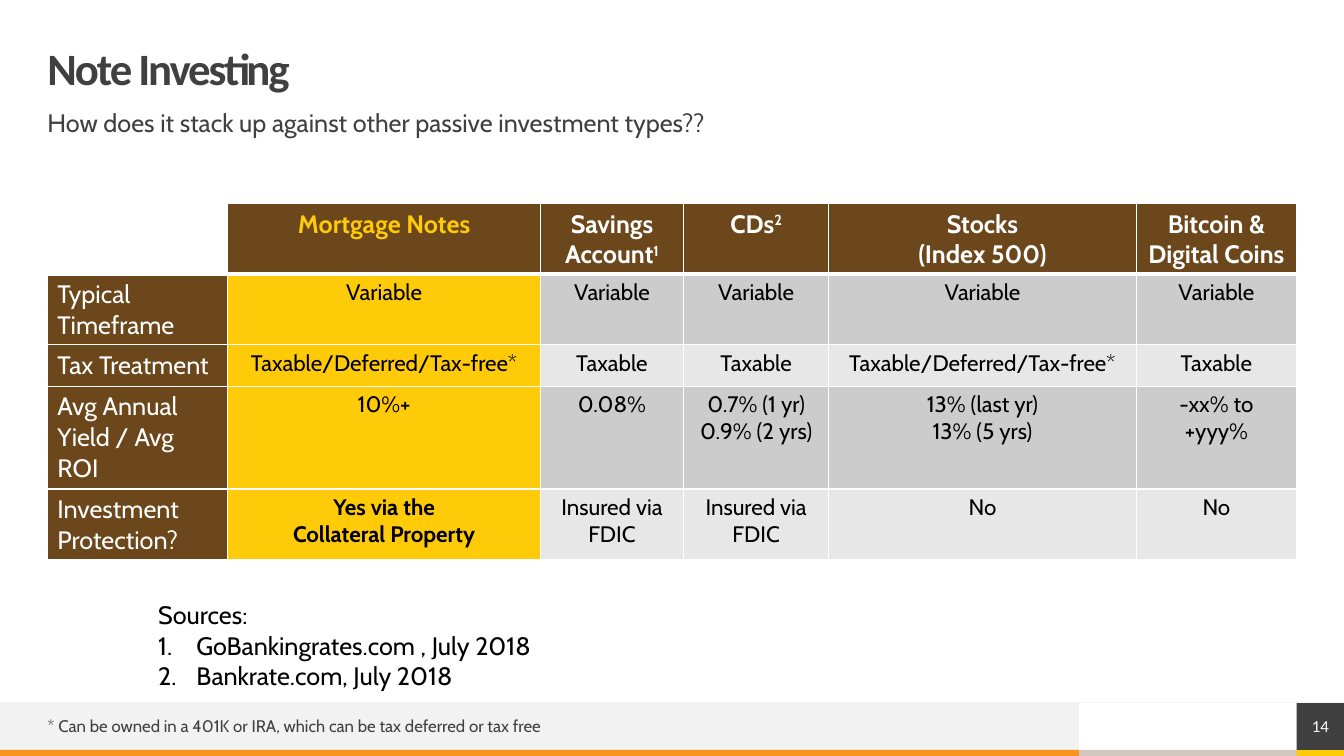
from pptx import Presentation
from pptx.dml.color import RGBColor
from pptx.enum.shapes import MSO_CONNECTOR, MSO_SHAPE
from pptx.enum.text import MSO_ANCHOR, MSO_AUTO_SIZE, PP_ALIGN
from pptx.oxml.ns import qn
from pptx.util import Inches, Pt
from lxml import etree

RECT = MSO_SHAPE.RECTANGLE
LINE = MSO_CONNECTOR.STRAIGHT
TOP, MIDDLE = MSO_ANCHOR.TOP, MSO_ANCHOR.MIDDLE
LEFT, CENTER = PP_ALIGN.LEFT, PP_ALIGN.CENTER
FIT = MSO_AUTO_SIZE.SHAPE_TO_FIT_TEXT

HEX = {
    "white": "FFFFFF", "black": "000000", "dark": "404040",
    "brown": "6B471B", "gold": "FFCA08", "orange": "F8931D",
    "taupe": "D2C6C1", "pale": "F2F2F2", "gray": "CCCCCC", "light": "E7E7E7",
}
RGB = {name: RGBColor.from_string(code) for name, code in HEX.items()}


def style(para, size, color, face="Cabin", bold=False, align=LEFT):
    para.alignment = align
    font = para.font
    font.name, font.size, font.bold = face, Pt(size), bold
    font.color.rgb = RGB[color]


def add_text(box, text, anchor=TOP):
    frame = box.text_frame
    frame.word_wrap = True
    frame.vertical_anchor = anchor
    frame.margin_left = frame.margin_right = 0
    frame.margin_top = frame.margin_bottom = 0
    frame.text = text
    return frame.paragraphs[0]


deck = Presentation()
deck.slide_width, deck.slide_height = Inches(13.33), Inches(7.5)
slide = deck.slides.add_slide(deck.slide_layouts[6])
shapes = slide.shapes

bars = [
    (10.7, 7.44, 2.17, 0.06, "taupe"),
    (0, 6.97, 10.7, 0.47, "pale"),
    (0, 7.44, 10.7, 0.06, "orange"),
    (12.86, 7.44, 0.47, 0.06, "gold"),
    (12.86, 6.97, 0.47, 0.47, "dark"),
]
for x, y, w, h, color in bars:
    bar = shapes.add_shape(RECT, Inches(x), Inches(y), Inches(w), Inches(h))
    bar.shadow.inherit = False
    bar.fill.solid()
    bar.fill.fore_color.rgb = RGB[color]
    bar.line.fill.background()
style(add_text(bar, "14", MIDDLE), 12, "white", "Calibri", align=CENTER)

rule = shapes.add_connector(LINE, Inches(13.33), Inches(6.97), 0, Inches(6.97))
rule.line.color.rgb = RGB["pale"]
rule.line.width = Pt(0.5)
etree.SubElement(rule._element.spPr, qn("a:effectLst"))

title = shapes.add_textbox(Inches(0.47), Inches(0.47), Inches(12.39), Inches(0.47))
para = add_text(title, "Note Investing", MIDDLE)
style(para, 32, "dark", "Calibri", True)
para.line_spacing = 0.9
para.runs[0]._r.get_or_add_rPr().set("spc", "-150")

lead = shapes.add_textbox(Inches(0.47), Inches(1.1), Inches(12.4), Inches(0.39))
para = add_text(lead, "How does it stack up against other passive investment types??")
style(para, 18, "dark")
para.line_spacing = 0.9

rows = [
    ["", "Mortgage Notes", "Savings Account^1", "CDs^2",
     "Stocks\n(Index 500)", "Bitcoin & Digital Coins"],
    ["Typical Timeframe"] + ["Variable"] * 5,
    ["Tax Treatment", "Taxable/Deferred/Tax-free*", "Taxable", "Taxable",
     "Taxable/Deferred/Tax-free*", "Taxable"],
    ["Avg Annual Yield / Avg ROI", "10%+", "0.08%", "0.7% (1 yr)\n0.9% (2 yrs)",
     "13% (last yr)\n13% (5 yrs)", "-xx% to +yyy%"],
    ["Investment Protection?", "Yes via the\nCollateral Property",
     "Insured via FDIC", "Insured via FDIC", "No", "No"],
]
widths = [1.79, 3.1, 1.42, 1.44, 3.05, 1.59]
heights = [0.7, 0.7, 0.41, 1.02, 0.7]
table = shapes.add_table(5, 6, Inches(0.47), Inches(2.02),
                         Inches(sum(widths)), Inches(sum(heights))).table
table.first_row = table.horz_banding = False
for col, width in zip(table.columns, widths):
    col.width = Inches(width)
for row, height in zip(table.rows, heights):
    row.height = Inches(height)

for i, row in enumerate(rows):
    for j, text in enumerate(row):
        cell = table.cell(i, j)
        props = cell._tc.get_or_add_tcPr()
        for side in "LRTB":
            thick = (i, side) in [(0, "B"), (1, "T")]
            edge = etree.SubElement(props, qn("a:ln" + side), w=str(Pt(3 if thick else 1)))
            fill = etree.SubElement(edge, qn("a:solidFill"))
            etree.SubElement(fill, qn("a:srgbClr"), val=HEX["white"])
        if not text:
            cell.fill.background()
            continue
        head = i == 0 or j == 0
        band = "gray" if i % 2 else "light"
        cell.fill.solid()
        cell.fill.fore_color.rgb = RGB["brown" if head else "gold" if j == 1 else band]
        main, _, note = text.partition("^")
        cell.text = main
        if note:
            run = cell.text_frame.paragraphs[0].add_run()
            run.text = note
            run._r.get_or_add_rPr().set("baseline", "30000")
        ink = "gold" if (i, j) == (0, 1) else "white" if head else "black"
        bold = i == 0 or (i, j) == (4, 1)
        for para in cell.text_frame.paragraphs:
            style(para, 18 if head else 16, ink, bold=bold, align=CENTER if j else LEFT)

foot = shapes.add_textbox(Inches(0.47), Inches(7.04), Inches(6.19), Inches(0.32))
para = add_text(foot, "* Can be owned in a 401K or IRA, which can be tax deferred or tax free", MIDDLE)
style(para, 12, "dark")

cites = shapes.add_textbox(Inches(1.47), Inches(5.9), Inches(3.92), Inches(1.01))
frame = cites.text_frame
frame.word_wrap = False
frame.auto_size = FIT
frame.text = "Sources:\nGoBankingrates.com , July 2018\nBankrate.com, July 2018"
for k, para in enumerate(frame.paragraphs):
    if k:
        props = para._p.get_or_add_pPr()
        props.set("marL", str(Inches(0.38)))
        props.set("indent", str(-Inches(0.38)))
        etree.SubElement(props, qn("a:buFont"), typeface="+mj-lt")
        etree.SubElement(props, qn("a:buAutoNum"), type="arabicPeriod")
    style(para, 18, "black")

deck.save("out.pptx")
